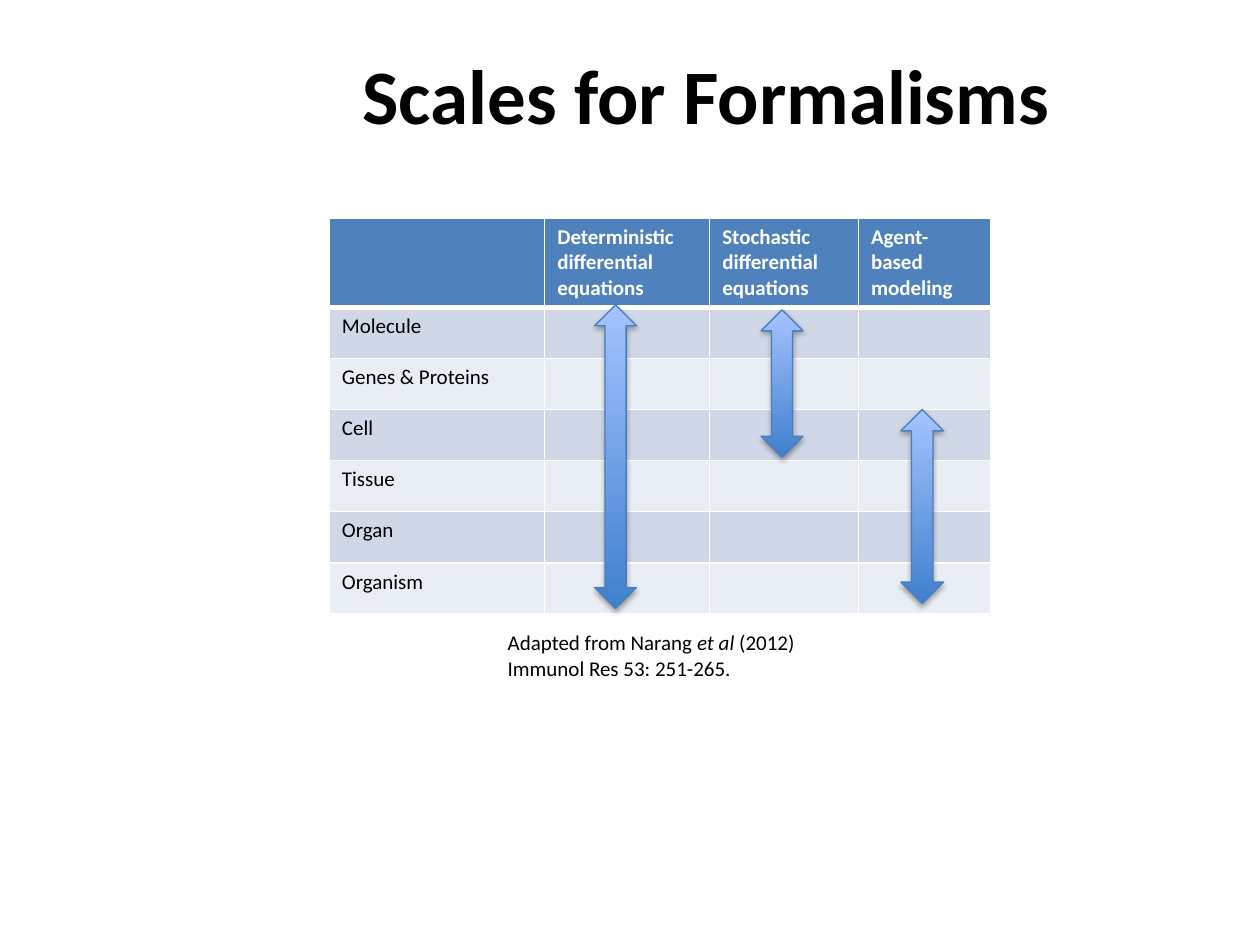
from lxml.etree import SubElement
from pptx import Presentation
from pptx.dml.color import RGBColor
from pptx.enum.shapes import MSO_SHAPE
from pptx.enum.text import MSO_ANCHOR, PP_ALIGN
from pptx.oxml.ns import qn
from pptx.util import Pt

BLACK = RGBColor(0x00, 0x00, 0x00)
WHITE = RGBColor(0xFF, 0xFF, 0xFF)
HEADER_BLUE = RGBColor(0x4F, 0x81, 0xBD)
BAND_DARK = RGBColor(0xD0, 0xD8, 0xE8)
BAND_LIGHT = RGBColor(0xE9, 0xED, 0xF4)
ARROW_BOTTOM = RGBColor(0x3F, 0x80, 0xCE)
ARROW_TOP = RGBColor(0xA4, 0xC4, 0xFF)
ARROW_EDGE = RGBColor(0x4B, 0x7E, 0xBC)

# Content
TITLE = "Scales for Formalisms"
FORMALISMS = ["", "Deterministic differential equations",
              "Stochastic differential equations", "Agent-based modeling"]
SCALES = ["Molecule", "Genes & Proteins", "Cell", "Tissue", "Organ", "Organism"]
CITATION = [("Adapted from Narang ", False), ("et al", True),
            (" (2012) Immunol Res 53: 251-265.", False)]
# Range of scales per formalism: left, top, width, height, mirrored
RANGES = [(339.8, 174.2, 24, 173.5, True),
          (434.9, 177.1, 24, 84.2, False),
          (514.8, 234, 24.5, 110.9, False)]

# Layout
TABLE_LEFT, TABLE_TOP = 188.2, 124.6
COLUMN_WIDTHS = [123.1, 94.3, 85, 75.6]
HEADER_HEIGHT, SCALE_HEIGHT = 51, 29.2

TITLE_FONT = dict(name="Calibri", size=Pt(44), bold=True)
HEADER_FONT = dict(name="Calibri", size=Pt(12), bold=True)
BODY_FONT = dict(name="Calibri", size=Pt(12), bold=False)


def style_font(font, formats, color):
    for key, value in formats.items():
        setattr(font, key, value)
    font.color.rgb = color


def add_box(slide, left, top, width, height):
    box = slide.shapes.add_textbox(Pt(left), Pt(top), Pt(width), Pt(height))
    box.text_frame.word_wrap = True
    return box.text_frame


def set_borders(cell, widths):
    properties = cell._tc.get_or_add_tcPr()
    for side, width in widths.items():
        line = SubElement(properties, qn(f"a:ln{side}"), w=str(Pt(width)))
        fill = SubElement(line, qn("a:solidFill"))
        SubElement(fill, qn("a:srgbClr"), val=str(WHITE))


def add_scale_table(slide):
    rows = [FORMALISMS] + [[scale, "", "", ""] for scale in SCALES]
    heights = [HEADER_HEIGHT] + [SCALE_HEIGHT] * len(SCALES)
    table = slide.shapes.add_table(
        len(rows), len(FORMALISMS), Pt(TABLE_LEFT), Pt(TABLE_TOP),
        Pt(sum(COLUMN_WIDTHS)), Pt(sum(heights))).table
    for column, width in zip(table.columns, COLUMN_WIDTHS):
        column.width = Pt(width)
    for r, (row, height) in enumerate(zip(rows, heights)):
        table.rows[r].height = Pt(height)
        band = HEADER_BLUE if r == 0 else BAND_DARK if r % 2 else BAND_LIGHT
        for c, text in enumerate(row):
            cell = table.cell(r, c)
            set_borders(cell, {"L": 1, "R": 1, "T": 3 if r == 1 else 1,
                               "B": 3 if r == 0 else 1})
            cell.fill.solid()
            cell.fill.fore_color.rgb = band
            if text:
                run = cell.text_frame.paragraphs[0].add_run()
                run.text = text
                style_font(run.font, BODY_FONT if r else HEADER_FONT,
                           BLACK if r else WHITE)


def add_range_arrow(slide, left, top, width, height, mirrored):
    arrow = slide.shapes.add_shape(MSO_SHAPE.UP_DOWN_ARROW, Pt(left), Pt(top),
                                   Pt(width), Pt(height))
    arrow.fill.gradient()
    arrow.fill.gradient_angle = 90
    for stop, color, position in zip(arrow.fill.gradient_stops,
                                     (ARROW_BOTTOM, ARROW_TOP), (0, 1)):
        stop.color.rgb = color
        stop.position = position
    arrow.line.color.rgb = ARROW_EDGE
    arrow.line.width = Pt(0.75)
    if mirrored:
        arrow._element.spPr.xfrm.set("flipH", "1")
    # Soft shadow straight below
    arrow.shadow.inherit = False
    effects = arrow._element.spPr.find(qn("a:effectLst"))
    shadow = SubElement(effects, qn("a:outerShdw"), blurRad=str(Pt(3.1)),
                        dist=str(Pt(1.8)), dir="5400000", rotWithShape="0")
    shade = SubElement(shadow, qn("a:srgbClr"), val=str(BLACK))
    SubElement(shade, qn("a:alpha"), val="35000")


def main():
    deck = Presentation()
    deck.slide_width, deck.slide_height = Pt(720), Pt(540)
    slide = deck.slides.add_slide(deck.slide_layouts[6])

    # Title
    title = add_box(slide, 128.9, 20.2, 549.4, 67)
    title.vertical_anchor = MSO_ANCHOR.MIDDLE
    heading = title.paragraphs[0]
    heading.alignment = PP_ALIGN.CENTER
    run = heading.add_run()
    run.text = TITLE
    style_font(run.font, TITLE_FONT, BLACK)

    # Table with the range arrows over it
    add_scale_table(slide)
    for scale_range in RANGES:
        add_range_arrow(slide, *scale_range)

    # Citation
    citation = add_box(slide, 283, 356.4, 180.7, 36)
    for text, italic in CITATION:
        run = citation.paragraphs[0].add_run()
        run.text = text
        style_font(run.font, {**BODY_FONT, "italic": italic}, BLACK)

    deck.save("out.pptx")


if __name__ == "__main__":
    main()
